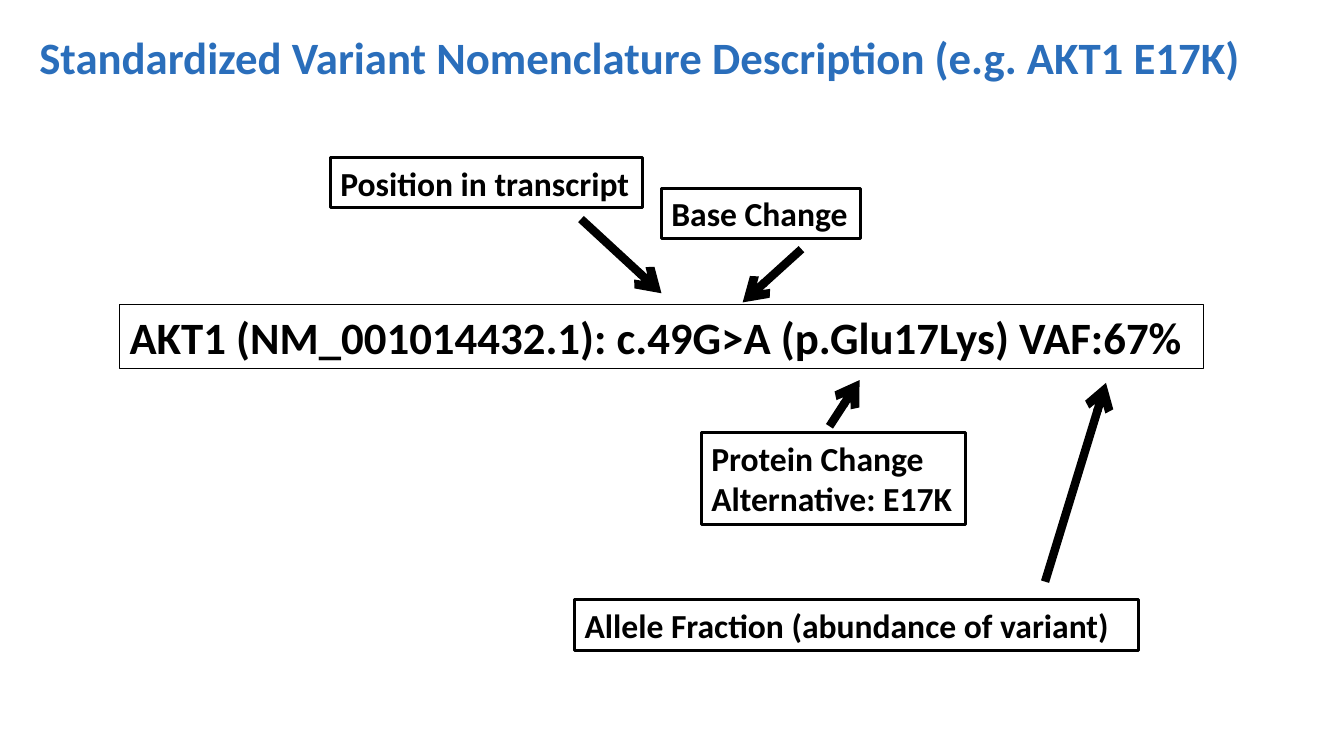
"""Build a slide that explains the parts of a standardized variant name."""
from lxml import etree
from pptx import Presentation
from pptx.dml.color import RGBColor
from pptx.enum.shapes import MSO_CONNECTOR, MSO_SHAPE
from pptx.enum.text import MSO_ANCHOR, MSO_AUTO_SIZE, PP_ALIGN
from pptx.oxml.ns import qn
from pptx.util import Pt

RECTANGLE = MSO_SHAPE.RECTANGLE
STRAIGHT = MSO_CONNECTOR.STRAIGHT
TOP = MSO_ANCHOR.TOP
FIT_SHAPE = MSO_AUTO_SIZE.SHAPE_TO_FIT_TEXT
LEFT = PP_ALIGN.LEFT
BLUE = RGBColor(0x2A, 0x6E, 0xBB)
BLACK = RGBColor(0, 0, 0)


def write_text(shape, text, size, color):
    text_frame = shape.text_frame
    text_frame.text = text
    text_frame.word_wrap = True
    text_frame.auto_size = FIT_SHAPE
    text_frame.vertical_anchor = TOP
    for paragraph in text_frame.paragraphs:
        paragraph.alignment = LEFT
        for run in paragraph.runs:
            run.font.name = "Calibri"
            run.font.size = Pt(size)
            run.font.bold = True
            run.font.color.rgb = color


presentation = Presentation()
presentation.slide_width = Pt(960)
presentation.slide_height = Pt(540)
slide = presentation.slides.add_slide(presentation.slide_layouts[6])

title = slide.shapes.add_textbox(Pt(21), Pt(17.5), Pt(896), Pt(46))
write_text(title, "Standardized Variant Nomenclature Description (e.g. AKT1 E17K)", 32, BLUE)

boxes = [
    ("Position in transcript", 236, 112.5, 223, 36, 24, 2.25),
    ("Base Change", 472.5, 134.5, 142, 36, 24, 2.25),
    ("Allele Fraction (abundance of variant)", 410.5, 428.5, 402.5, 36, 24, 2.25),
    ("Protein Change\nAlternative: E17K", 501, 309, 189, 65.5, 24, 2.25),
    ("AKT1 (NM_001014432.1): c.49G>A (p.Glu17Lys) VAF:67%", 85.5, 217.5, 774, 46, 32, 0.75),
]
for text, left, top, width, height, size, line_width in boxes:
    box = slide.shapes.add_shape(RECTANGLE, Pt(left), Pt(top), Pt(width), Pt(height))
    box.shadow.inherit = False
    box.fill.background()
    box.line.color.rgb = BLACK
    box.line.width = Pt(line_width)
    write_text(box, text, size, BLACK)

arrows = [
    (415, 156.5, 472.5, 209.5),
    (746.5, 415.5, 790, 273.5),
    (572.5, 178, 530.5, 216),
    (592.5, 304.5, 614, 271.5),
]
for points in arrows:
    arrow = slide.shapes.add_connector(STRAIGHT, *map(Pt, points))
    arrow.line.color.rgb = BLACK
    arrow.line.width = Pt(6)
    etree.SubElement(arrow.line._get_or_add_ln(), qn("a:tailEnd"), type="arrow")
    etree.SubElement(arrow._element.spPr, qn("a:effectLst"))

presentation.save("out.pptx")
